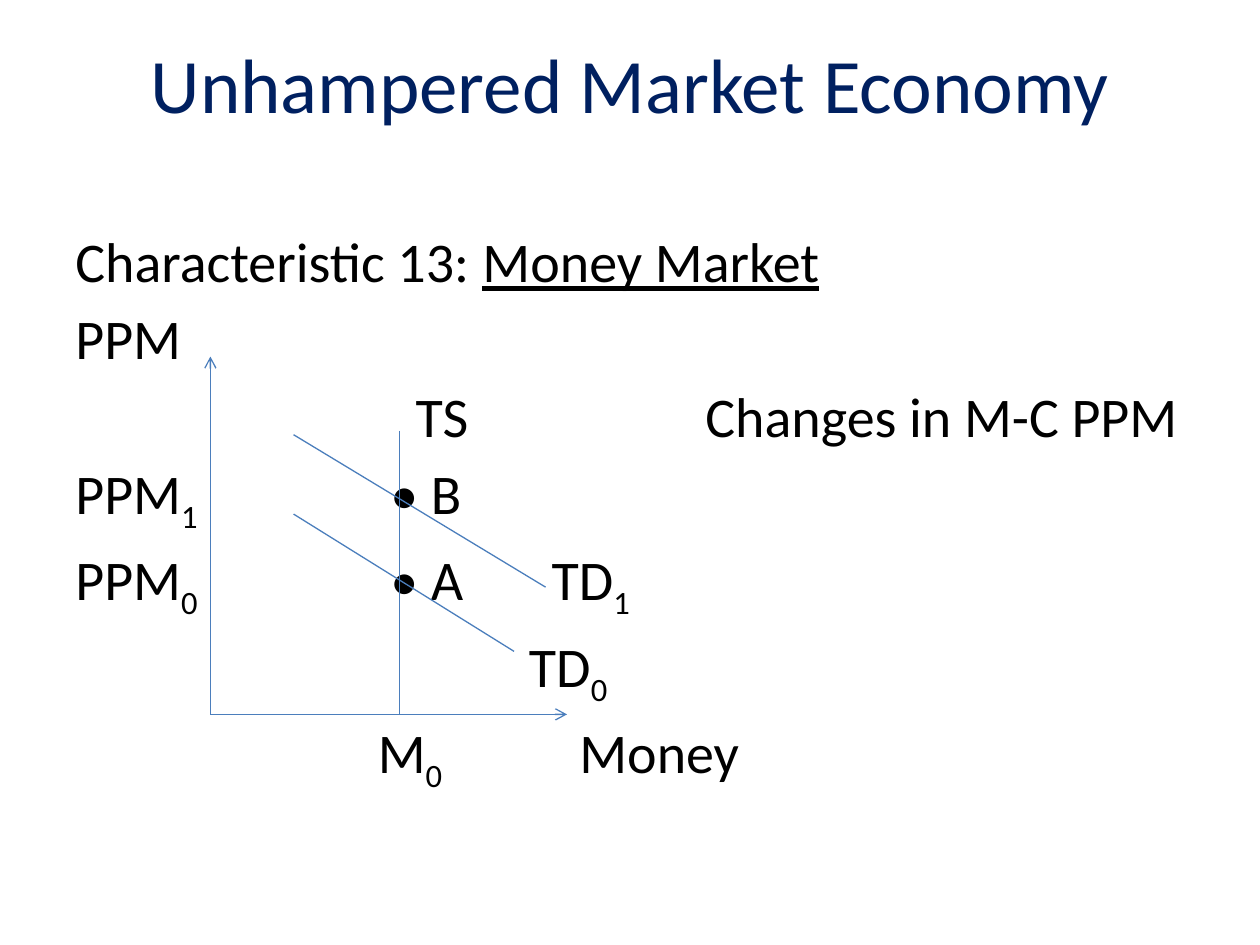
from lxml.etree import SubElement
from pptx import Presentation
from pptx.dml.color import RGBColor
from pptx.enum.shapes import MSO_CONNECTOR
from pptx.enum.text import MSO_ANCHOR, PP_ALIGN
from pptx.oxml.ns import qn
from pptx.util import Inches, Pt

NAVY = RGBColor(0x00, 0x20, 0x60)
BLACK = RGBColor(0x00, 0x00, 0x00)
BLUE = RGBColor(0x4B, 0x7E, 0xBC)
FONT = "Calibri"

TITLE = "Unhampered Market Economy"
SUB, UNDER = "sub", "under"
ROWS = [
    ([], [("Characteristic 13: ", None), ("Money Market", UNDER)]),
    ([], [("PPM", None)]),
    ([2.7, 5], [("\tTS\tChanges in M-C PPM", None)]),
    ([2.5], [("PPM", None), ("1", SUB), ("\t• B", None)]),
    ([2.5, 3.78], [("PPM", None), ("0", SUB), ("\t• A\tTD", None), ("1", SUB)]),
    ([3.6], [("\tTD", None), ("0", SUB)]),
    ([2.4, 4], [("\tM", None), ("0", SUB), ("\tMoney", None)]),
]

ORIGIN = (1.67, 5.67)
AXES = [(ORIGIN, (1.67, 2.83)), (ORIGIN, (4.5, 5.67))]
CURVES = [
    ((3.17, 3.42), (3.17, 5.67)),
    ((2.33, 4.08), (4.08, 5.17)),
    ((2.33, 3.45), (4.33, 4.66)),
]


def style(r, size, color):
    r.font.name = FONT
    r.font.size = Pt(size)
    r.font.color.rgb = color


def add_title(s):
    sp = s.shapes.title
    sp.left, sp.top, sp.width, sp.height = map(Inches, (0, 0.03, 10, 1.25))
    tf = sp.text_frame
    tf.text = TITLE
    tf.vertical_anchor = MSO_ANCHOR.MIDDLE
    tf.paragraphs[0].alignment = PP_ALIGN.CENTER
    style(tf.paragraphs[0].runs[0], 44, NAVY)


def add_tabs(p, stops):
    if stops:
        tabs = SubElement(p._p.get_or_add_pPr(), qn("a:tabLst"))
        for stop in stops:
            SubElement(tabs, qn("a:tab"), pos=str(Inches(stop)), algn="l")


def add_body(s):
    tf = s.shapes.add_textbox(*map(Inches, (0.5, 1.75, 9, 5.75))).text_frame
    tf.word_wrap = True
    for i, (stops, runs) in enumerate(ROWS):
        p = tf.add_paragraph() if i else tf.paragraphs[0]
        p.space_before = Pt(5.7)
        add_tabs(p, stops)
        for text, kind in runs:
            r = p.add_run()
            r.text = text
            style(r, 32, BLACK)
            if kind == UNDER:
                r.font.underline = True
            elif kind == SUB:
                r._r.get_or_add_rPr().set("baseline", "-25000")


def add_line(s, start, end, arrow=False):
    sp = s.shapes.add_connector(MSO_CONNECTOR.STRAIGHT, *map(Inches, start + end))
    sp.line.color.rgb = BLUE
    sp.line.width = Pt(0.75)
    if arrow:
        SubElement(sp.line._get_or_add_ln(), qn("a:tailEnd"), type="arrow")
    SubElement(sp._element.spPr, qn("a:effectLst"))


def main():
    prs = Presentation()
    prs.slide_width, prs.slide_height = Inches(10), Inches(7.5)
    s = prs.slides.add_slide(prs.slide_layouts[5])
    add_title(s)
    add_body(s)
    for start, end in AXES:
        add_line(s, start, end, arrow=True)
    for start, end in CURVES:
        add_line(s, start, end)
    prs.save("out.pptx")


if __name__ == "__main__":
    main()
